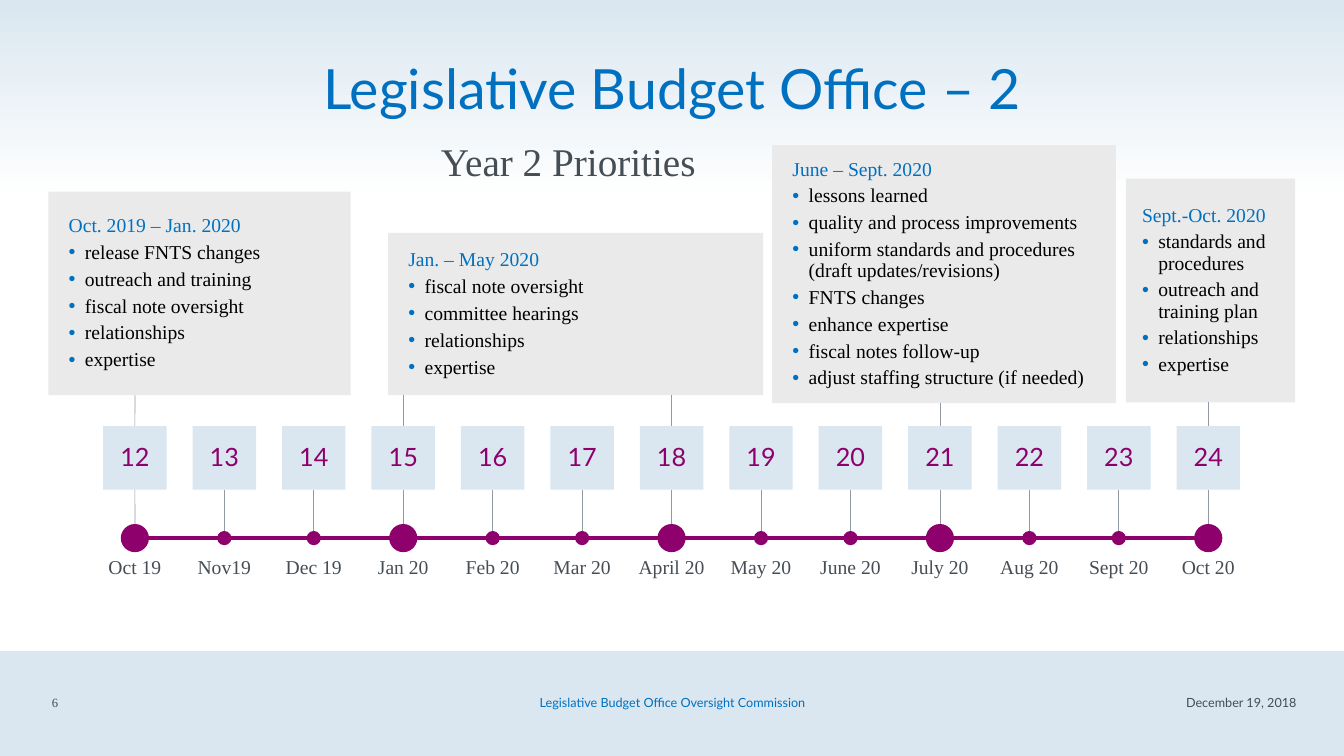
from dataclasses import dataclass

from lxml.etree import SubElement
from pptx import Presentation
from pptx.dml.color import RGBColor as Rgb
from pptx.enum.shapes import MSO_CONNECTOR as Connector, MSO_SHAPE as Shape
from pptx.enum.text import MSO_ANCHOR as Anchor, MSO_AUTO_SIZE as AutoSize, PP_ALIGN as Align
from pptx.oxml.ns import qn
from pptx.util import Cm, Pt


@dataclass(frozen=True)
class Theme:
    """Colours, fonts and type sizes of the slide."""
    blue: str = "0070C0"
    pale: str = "DAE7F0"
    white: str = "FFFFFF"
    plum: str = "8E006C"
    slate: str = "454D55"
    stem: str = "9399A1"
    card: str = "EAEAEA"
    black: str = "000000"
    sans: str = "Lato"
    serif: str = "Times New Roman"
    title: float = 39.6
    subtitle: float = 28
    number: float = 18
    body: float = 14
    footer: float = 9


class TimelineSlide:
    """Draws the parts of a timeline slide in one theme."""

    def __init__(self, slide, theme):
        """Keep the slide and its theme."""
        self.slide, self.theme = slide, theme
        self.shapes = slide.shapes

    def place(self, shape, left, top, width, height):
        """Move a placeholder to a position in centimetres."""
        shape.left, shape.top, shape.width, shape.height = map(Cm, (left, top, width, height))

    def frame(self, shape, anchor, insets=(0.25, 0.13)):
        """Prepare the text frame with left-right and top-bottom insets."""
        frame = shape.text_frame
        frame.word_wrap, frame.auto_size = True, AutoSize.NONE
        frame.vertical_anchor = anchor
        frame.margin_left = frame.margin_right = Cm(insets[0])
        frame.margin_top = frame.margin_bottom = Cm(insets[1])
        return frame

    def style(self, paragraph, size, color, font, align=Align.CENTER, before=0):
        """Format a paragraph and its runs."""
        paragraph.alignment, paragraph.line_spacing = align, 0.9
        paragraph.space_before = Pt(before)
        for run in paragraph.runs:
            run.font.size, run.font.name, run.font.bold = Pt(size), font, False
            run.font.color.rgb = Rgb.from_string(color)

    def title(self, text):
        """Fill the title placeholder."""
        heading = self.shapes.title
        self.place(heading, 4.24, 1.42, 25.4, 1.9)
        frame = self.frame(heading, Anchor.TOP)
        frame.text = text
        self.style(frame.paragraphs[0], self.theme.title, self.theme.blue, self.theme.sans)

    def label(self, text, box, size, color, font, align=Align.CENTER, insets=(0.25, 0.13)):
        """Add a one-line text box."""
        caption = self.shapes.add_textbox(*map(Cm, box))
        frame = self.frame(caption, Anchor.MIDDLE, insets)
        frame.text = text
        self.style(frame.paragraphs[0], size, color, font, align)

    def block(self, kind, box, color):
        """Add a filled shape without an outline."""
        block = self.shapes.add_shape(kind, *map(Cm, box))
        block.shadow.inherit = False
        block.fill.solid()
        block.fill.fore_color.rgb = Rgb.from_string(color)
        block.line.fill.background()
        return block

    def band(self, box, end_color=None):
        """Add a background band, fading downwards when an end colour is given."""
        band = self.block(Shape.RECTANGLE, box, self.theme.pale)
        if end_color:
            band.fill.gradient()
            band.fill.gradient_angle = 270
            for stop, color in zip(band.fill.gradient_stops, (self.theme.pale, end_color)):
                stop.color.rgb = Rgb.from_string(color)
        self.shapes._spTree.insert(2, band._element)

    def number(self, text, box):
        """Add a numbered square."""
        square = self.block(Shape.RECTANGLE, box, self.theme.pale)
        frame = self.frame(square, Anchor.MIDDLE)
        frame.text = text
        self.style(frame.paragraphs[0], self.theme.number, self.theme.plum, self.theme.sans)
        return square

    def line(self, start, end, color, width):
        """Add a straight line between two points."""
        line = self.shapes.add_connector(Connector.STRAIGHT, *map(Cm, start + end))
        line.line.color.rgb = Rgb.from_string(color)
        line.line.width = Pt(width)
        SubElement(line._element.spPr, qn("a:effectLst"))
        return line

    def card(self, placeholder, box, left_inset, period, tasks):
        """Turn a body placeholder into a grey card with a bulleted list."""
        theme = self.theme
        self.place(placeholder, *box)
        placeholder.fill.solid()
        placeholder.fill.fore_color.rgb = Rgb.from_string(theme.card)
        frame = self.frame(placeholder, Anchor.MIDDLE)
        frame.margin_left = Cm(left_inset)
        frame.text = "\n".join([period, *tasks])
        for index, paragraph in enumerate(frame.paragraphs):
            color = theme.black if index else theme.blue
            self.style(paragraph, theme.body, color, theme.serif, Align.LEFT, 4)
            indent = Cm(0.41) if index else 0
            properties = paragraph._p.get_or_add_pPr()
            properties.set("marL", str(indent))
            properties.set("indent", str(-indent))
            if index:
                bullet_color = SubElement(properties, qn("a:buClr"))
                SubElement(bullet_color, qn("a:srgbClr"), val=theme.blue)
                SubElement(properties, qn("a:buFont"), typeface="Arial")
                SubElement(properties, qn("a:buChar"), char="•")
            else:
                SubElement(properties, qn("a:buNone"))


CARDS = [
    ((1.22, 4.83, 7.62, 5.13), 0.51, "Oct. 2019 – Jan. 2020",
     ["release FNTS changes", "outreach and training", "fiscal note oversight",
      "relationships", "expertise"]),
    ((9.78, 5.87, 9.45, 4.09), 0.51, "Jan. – May 2020",
     ["fiscal note oversight", "committee hearings", "relationships", "expertise"]),
    ((19.46, 3.66, 8.66, 6.5), 0.51, "June – Sept. 2020",
     ["lessons learned", "quality and process improvements",
      "uniform standards and procedures (draft updates/revisions)", "FNTS changes",
      "enhance expertise", "fiscal notes follow-up", "adjust staffing structure (if needed)"]),
    ((28.37, 4.5, 4.27, 5.64), 0.41, "Sept.-Oct. 2020",
     ["standards and procedures", "outreach and training plan", "relationships", "expertise"]),
]
MONTHS = ["Oct 19", "Nov19", "Dec 19", "Jan 20", "Feb 20", "Mar 20", "April 20",
          "May 20", "June 20", "July 20", "Aug 20", "Sept 20", "Oct 20"]
MILESTONE_CARDS = {0: 0, 3: 1, 6: 1, 9: 2, 12: 3}
FIRST_NUMBER = 12
AXIS_START, AXIS_END, AXIS_Y = 3.4, 30.45, 13.56
SQUARE, SQUARE_TOP = 1.6, 10.74


def main():
    """Build the slide and save it."""
    deck = Presentation()
    deck.slide_width, deck.slide_height = Cm(33.87), Cm(19.05)
    theme = Theme()
    page = TimelineSlide(deck.slides.add_slide(deck.slide_layouts[4]), theme)

    page.title("Legislative Budget Office – 2")
    bodies = list(page.slide.placeholders)[1:]
    for body, card in zip(bodies, CARDS):
        page.card(body, *card)
    page.band((0, 0, 33.87, 5.08), theme.white)
    page.band((0, 16.41, 33.87, 2.64))
    page.label("Year 2 Priorities", (10.86, 3.45, 7.4, 1.37), theme.subtitle, theme.slate,
               theme.serif, Align.LEFT)

    page.line((AXIS_START, AXIS_Y), (AXIS_END, AXIS_Y), theme.plum, 2.84)
    step = (AXIS_END - AXIS_START) / (len(MONTHS) - 1)
    for index, month in enumerate(MONTHS):
        x = AXIS_START + index * step
        square = page.number(str(FIRST_NUMBER + index),
                             (x - SQUARE / 2, SQUARE_TOP, SQUARE, SQUARE))
        size = 0.71 if index in MILESTONE_CARDS else 0.36
        dot = page.block(Shape.OVAL, (x - size / 2, AXIS_Y - size / 2, size, size), theme.plum)
        stem = page.line((x, SQUARE_TOP + SQUARE), (x, AXIS_Y - size / 2), theme.stem, 0.5)
        stem.begin_connect(square, 2)
        stem.end_connect(dot, 0)
        if index in MILESTONE_CARDS:
            _, top, _, height = CARDS[MILESTONE_CARDS[index]][0]
            link = page.line((x, top + height), (x, SQUARE_TOP), theme.stem, 0.5)
            link.end_connect(square, 0)
        page.label(month, (x - 0.93, 13.94, 1.86, 0.74), theme.body, theme.slate,
                   theme.serif, insets=(0, 0))

    page.label("6", (0.79, 17.22, 1.19, 1.02), theme.footer, theme.slate, theme.serif)
    page.label("Legislative Budget Office Oversight Commission", (11.23, 17.22, 11.43, 1.02),
               theme.footer, theme.blue, theme.sans)
    page.label("December 19, 2018", (25.3, 17.22, 7.62, 1.02), theme.footer, theme.slate,
               theme.sans, Align.RIGHT)
    deck.save("out.pptx")


if __name__ == "__main__":
    main()
